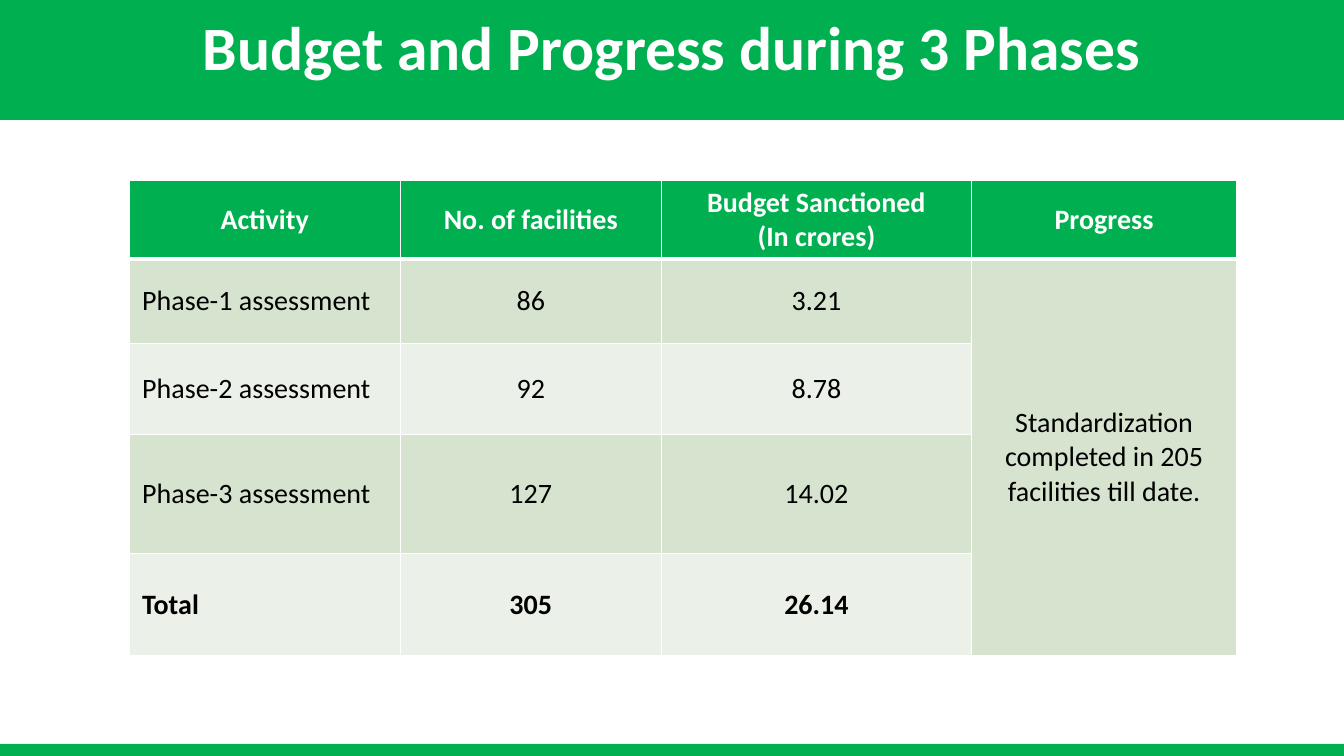
"""Build a slide with a table of budget and progress over three phases."""
from lxml import etree
from pptx import Presentation
from pptx.dml.color import RGBColor
from pptx.enum.shapes import MSO_SHAPE
from pptx.enum.text import MSO_ANCHOR, PP_ALIGN
from pptx.oxml.ns import qn
from pptx.util import Pt

RECT = MSO_SHAPE.RECTANGLE
MIDDLE = MSO_ANCHOR.MIDDLE
LEFT, CENTER = PP_ALIGN.LEFT, PP_ALIGN.CENTER
WIDTH, HEIGHT = 960, 540
GREEN, WHITE, BLACK = "00B050", "FFFFFF", "000000"
BANDS = ("D5E3CF", "EBF1E9")

COLS = (193.7, 186.5, 221.6, 189.4)
ROWS = (55.8, 60.4, 65, 85, 72.6)
DATA = (
    ("Activity", "No. of facilities", "Budget Sanctioned\n(In crores)", "Progress"),
    ("Phase-1 assessment", "86", "3.21",
     "Standardization completed in 205 facilities till date."),
    ("Phase-2 assessment", "92", "8.78", ""),
    ("Phase-3 assessment", "127", "14.02", ""),
    ("Total", "305", "26.14", ""),
)


def color(code):
    return RGBColor.from_string(code)


class Deck:
    """Hold the style and the current slide."""

    font = "Calibri"

    def __init__(self):
        self.show = Presentation()
        self.show.slide_width, self.show.slide_height = Pt(WIDTH), Pt(HEIGHT)
        self.slide = self.show.slides.add_slide(self.show.slide_layouts[6])

    def text(self, frame, words, size, ink, bold, align, space=1.0):
        for i, line in enumerate(words.split("\n")):
            para = frame.paragraphs[0] if i == 0 else frame.add_paragraph()
            para.alignment, para.line_spacing = align, space
            run = para.add_run()
            run.text = line
            run.font.name, run.font.size = self.font, Pt(size)
            run.font.bold, run.font.color.rgb = bold, color(ink)

    def bar(self, top, height):
        shape = self.slide.shapes.add_shape(RECT, 0, Pt(top), Pt(WIDTH), Pt(height))
        shape.shadow.inherit = False
        shape.fill.solid()
        shape.fill.fore_color.rgb = color(GREEN)
        shape.line.fill.background()
        return shape

    def title(self, words, height):
        frame = self.bar(0, height).text_frame
        frame.word_wrap, frame.vertical_anchor = True, MIDDLE
        self.text(frame, words, 44, WHITE, True, CENTER, 0.9)

    def edge(self, cell, tag, width):
        props = cell._tc.get_or_add_tcPr()
        line = etree.SubElement(props, qn(tag), w=str(Pt(width)))
        fill = etree.SubElement(line, qn("a:solidFill"))
        etree.SubElement(fill, qn("a:srgbClr"), val=WHITE)

    def cell(self, cell, row, col, words):
        head = row == 0
        for tag, heavy in (("a:lnL", False), ("a:lnR", False),
                           ("a:lnT", row == 1), ("a:lnB", head)):
            self.edge(cell, tag, 3 if heavy else 1)
        cell.fill.solid()
        band = BANDS[0] if col == 3 else BANDS[(row - 1) % 2]
        cell.fill.fore_color.rgb = color(GREEN if head else band)
        cell.vertical_anchor = MIDDLE
        cell.margin_left = cell.margin_right = Pt(9.4)
        cell.margin_top = cell.margin_bottom = Pt(3.6)
        if words:
            bold = row in (0, len(ROWS) - 1)
            align = LEFT if col == 0 and not head else CENTER
            self.text(cell.text_frame, words, 20, WHITE if head else BLACK, bold, align)

    def table(self, left, top):
        grid = self.slide.shapes.add_table(
            len(ROWS), len(COLS), Pt(left), Pt(top), Pt(sum(COLS)), Pt(sum(ROWS))).table
        for col, width in enumerate(COLS):
            grid.columns[col].width = Pt(width)
        for row, height in enumerate(ROWS):
            grid.rows[row].height = Pt(height)
            for col, words in enumerate(DATA[row]):
                self.cell(grid.cell(row, col), row, col, words)
        grid.cell(1, 3).merge(grid.cell(4, 3))


def main():
    deck = Deck()
    deck.bar(0, 85.7)
    deck.title("Budget and Progress during 3 Phases", 72)
    deck.table(92.2, 128.9)
    deck.bar(531.4, 8.6)
    deck.show.save("out.pptx")


if __name__ == "__main__":
    main()
